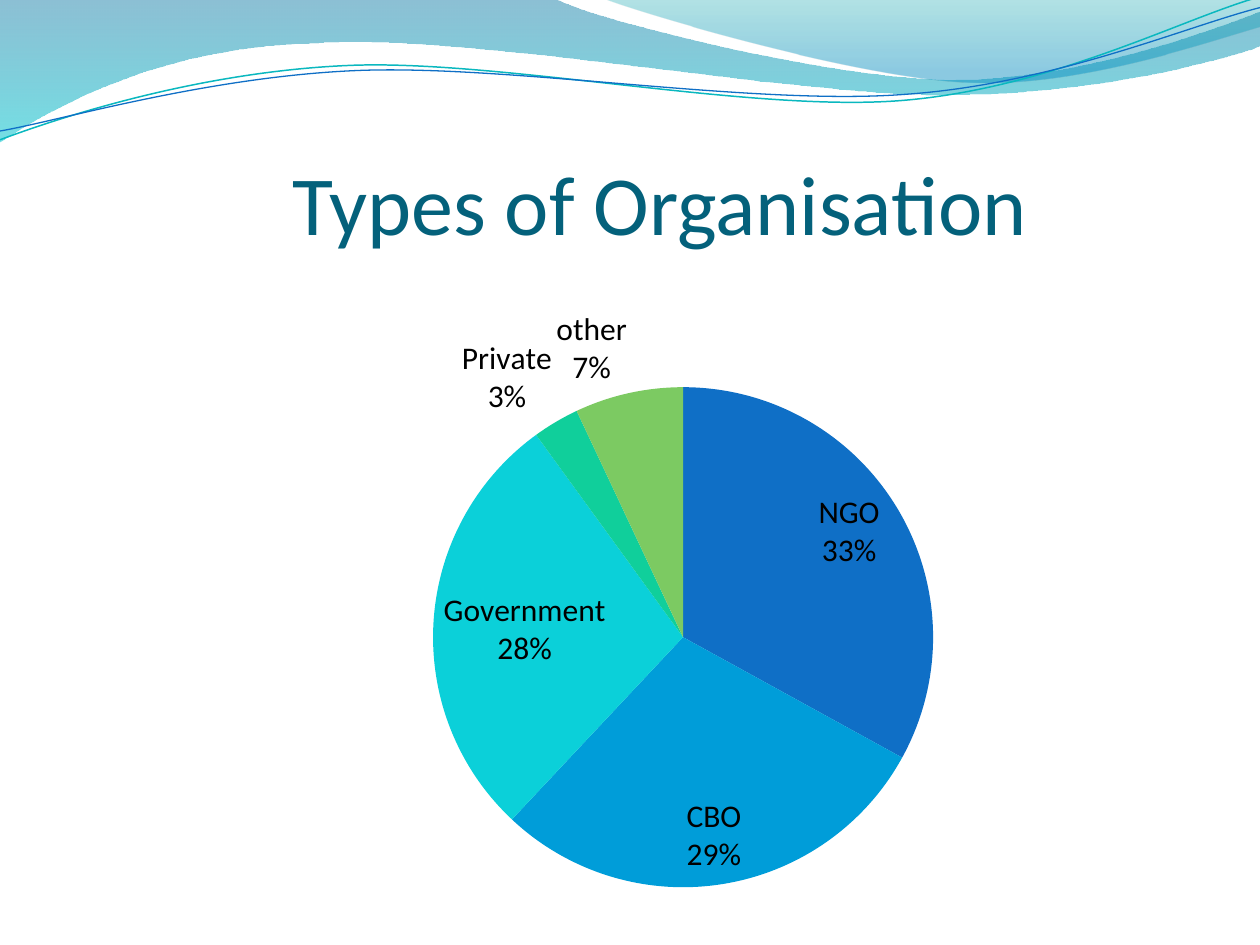
from dataclasses import dataclass
from math import cos, radians, sin

from lxml import etree
from pptx import Presentation
from pptx.chart.data import CategoryChartData
from pptx.dml.color import RGBColor
from pptx.enum.chart import XL_CHART_TYPE, XL_LABEL_POSITION
from pptx.enum.text import PP_ALIGN
from pptx.oxml.ns import qn
from pptx.util import Inches, Pt

PIE = XL_CHART_TYPE.PIE
BEST_FIT = XL_LABEL_POSITION.BEST_FIT
CENTER = PP_ALIGN.CENTER

COLORS = {
    "title": "04617B", "text": "000000",
    "wave_top": "0074A1", "wave_bottom": "00C6CF",
    "crest_top": "00A1A9", "crest_bottom": "008BBF",
    "teal_line": "0AB8BF", "blue_line": "0F6FC6",
    "NGO": "0F6FC6", "CBO": "009DD9", "Government": "0BD0D9",
    "Private": "10CF9B", "other": "7CCA62",
}
SHARES = {"NGO": 33, "CBO": 29, "Government": 28, "Private": 3, "other": 7}
LINE_TILT = -2.7

Point = tuple[float, float]


@dataclass
class Outline:
    """Box is left, top, width, height; a step of two numbers is a line, of six a curve."""
    box: tuple[float, float, float, float]
    start: Point
    steps: list[tuple[float, ...]]
    tilt: float = 0


@dataclass
class GradientStop:
    position: float
    color: str
    opacity: int


@dataclass
class Band:
    outline: Outline
    stops: list[GradientStop]


@dataclass
class WaveLine:
    outline: Outline
    color: str
    width: float


BANDS = [
    Band(Outline((-0.01, -0.01, 10.02, 1.14), (0, 0), [
        (4.4, -0.01),
        (4.76, 0.17, 6.64, 0.63, 7.58, 0.63),
        (8.53, 0.63, 9.58, 0.26, 10, 0.09),
        (10.01, 0.36),
        (9.83, 0.44, 8.7, 0.76, 7.46, 0.75),
        (6.22, 0.75, 3.82, 0.28, 2.57, 0.34),
        (1.29, 0.36, 0.46, 0.83, -0.01, 1.13),
        (0, 0),
    ]), [GradientStop(0, "wave_top", 45), GradientStop(1, "wave_bottom", 55)]),
    Band(Outline((4.79, -0.01, 5.21, 0.7), (4.79, -0.01), [
        (5.09, 0.11, 6.82, 0.62, 7.69, 0.65),
        (8.56, 0.69, 9.61, 0.32, 10, 0.21),
        (10, 0),
        (4.79, -0.01),
    ]), [GradientStop(0, "crest_top", 30), GradientStop(0.8, "crest_bottom", 45)]),
]
WAVE_LINES = [
    WaveLine(Outline((-0.02, 0.22, 10.02, 0.71), (0, 1.11), [
        (0.48, 0.93, 1.58, 0.57, 2.77, 0.52),
        (3.95, 0.47, 5.93, 0.89, 7.13, 0.8),
        (8.33, 0.71, 9.38, 0.15, 9.98, -0.02),
    ], LINE_TILT), "teal_line", 0.85),
    WaveLine(Outline((-0.02, 0.3, 10.03, 0.58), (0, 1.04), [
        (0.47, 0.96, 1.64, 0.61, 2.83, 0.56),
        (4.03, 0.51, 5.97, 0.84, 7.17, 0.75),
        (8.36, 0.67, 9.41, 0.21, 10, 0.06),
    ], LINE_TILT), "blue_line", 0.75),
]


def rgb(name: str) -> RGBColor:
    return RGBColor.from_string(COLORS[name])


def local_point(outline: Outline, x: float, y: float) -> Point:
    """Turn a slide point into a point of the untilted box."""
    left, top, width, height = outline.box
    dx, dy = x - left - width / 2, y - top - height / 2
    angle = radians(-outline.tilt)
    return (width / 2 + dx * cos(angle) - dy * sin(angle),
            height / 2 + dx * sin(angle) + dy * cos(angle))


def add_outline(slide, outline: Outline, closed: bool):
    """Build the outline from its anchor points, then bend the curved steps."""
    anchors = [(Inches(x), Inches(y))
               for *_, x, y in [outline.start, *outline.steps]]
    builder = slide.shapes.build_freeform(*anchors[0])
    builder.add_line_segments(anchors[1:], close=closed)
    shape = builder.convert_to_shape()
    shape.left, shape.top, shape.width, shape.height = map(Inches, outline.box)
    shape.rotation = outline.tilt
    shape.shadow.inherit = False

    geometry = next(shape._element.iter(qn("a:path")))
    geometry.set("w", str(shape.width))
    geometry.set("h", str(shape.height))
    for segment, step in zip(list(geometry), [outline.start, *outline.steps]):
        target = segment
        if len(step) == 6:
            target = etree.Element(qn("a:cubicBezTo"))
            geometry.replace(segment, target)
        for point in list(target):
            target.remove(point)
        for point in zip(step[::2], step[1::2]):
            x, y = local_point(outline, *point)
            etree.SubElement(target, qn("a:pt"), x=str(Inches(x)), y=str(Inches(y)))
    return shape


def add_band(slide, band: Band) -> None:
    shape = add_outline(slide, band.outline, closed=True)
    shape.line.fill.background()
    shape.fill.gradient()
    shape.fill.gradient_angle = 270  # counter-clockwise: top to bottom
    for gradient_stop, stop in zip(shape.fill.gradient_stops, band.stops):
        gradient_stop.position = stop.position
        gradient_stop.color.rgb = rgb(stop.color)
    for color, stop in zip(shape._element.spPr.iter(qn("a:srgbClr")), band.stops):
        etree.SubElement(color, qn("a:alpha"), val=str(stop.opacity * 1000))


def add_wave_line(slide, wave: WaveLine) -> None:
    shape = add_outline(slide, wave.outline, closed=False)
    shape.fill.background()
    shape.line.color.rgb = rgb(wave.color)
    shape.line.width = Pt(wave.width)


def add_title(slide, text: str) -> None:
    title = slide.shapes.add_textbox(Inches(1.22), Inches(1.15), Inches(8.03), Inches(0.91))
    title.text_frame.word_wrap = True
    paragraph = title.text_frame.paragraphs[0]
    paragraph.text = text
    paragraph.alignment = CENTER
    paragraph.font.name = "Calibri"
    paragraph.font.size = Pt(48)
    paragraph.font.color.rgb = rgb("title")


def set_plot_layout(chart, x: float, y: float, w: float, h: float) -> None:
    """Place the inner plot area, in fractions of the chart."""
    plot_area = chart._chartSpace.chart.plotArea
    for old_layout in plot_area.findall(qn("c:layout")):
        plot_area.remove(old_layout)
    layout = etree.Element(qn("c:layout"))
    plot_area.insert(0, layout)
    manual = etree.SubElement(layout, qn("c:manualLayout"))
    settings = {"layoutTarget": "inner", "xMode": "edge", "yMode": "edge",
                "x": x, "y": y, "w": w, "h": h}
    for tag, value in settings.items():
        etree.SubElement(manual, qn(f"c:{tag}"), val=str(value))


def add_share_chart(slide) -> None:
    data = CategoryChartData()
    data.categories = list(SHARES)
    data.add_series("Series 1", list(SHARES.values()))
    chart = slide.shapes.add_chart(
        PIE, Inches(0.35), Inches(2.25), Inches(8.82), Inches(4.97), data).chart
    chart.has_title = False
    chart.has_legend = False
    chart.font.name = "TeX Gyre Pagella"
    chart.font.size = Pt(10)
    chart.font.color.rgb = rgb("text")
    set_plot_layout(chart, 0.35, 0.16, 0.45, 0.81)

    plot = chart.plots[0]
    plot.vary_by_categories = True
    for index, category in enumerate(SHARES):
        fill = plot.series[0].points[index].format.fill
        fill.solid()
        fill.fore_color.rgb = rgb(category)

    labels = plot.series[0].data_labels
    labels.show_category_name = True
    labels.show_percentage = True
    labels.show_value = False
    labels.number_format = "0%"
    labels.number_format_is_linked = False
    labels.position = BEST_FIT
    labels.font.name = "Calibri"
    labels.font.size = Pt(18)
    separator = etree.Element(qn("c:separator"))
    separator.text = "\n"
    labels._element.find(qn("c:showBubbleSize")).addnext(separator)


def main() -> None:
    presentation = Presentation()
    presentation.slide_width, presentation.slide_height = Inches(10), Inches(7.5)
    slide = presentation.slides.add_slide(presentation.slide_layouts[6])
    for band in BANDS:
        add_band(slide, band)
    for wave in WAVE_LINES:
        add_wave_line(slide, wave)
    add_title(slide, "Types of Organisation")
    add_share_chart(slide)
    presentation.save("out.pptx")


if __name__ == "__main__":
    main()
